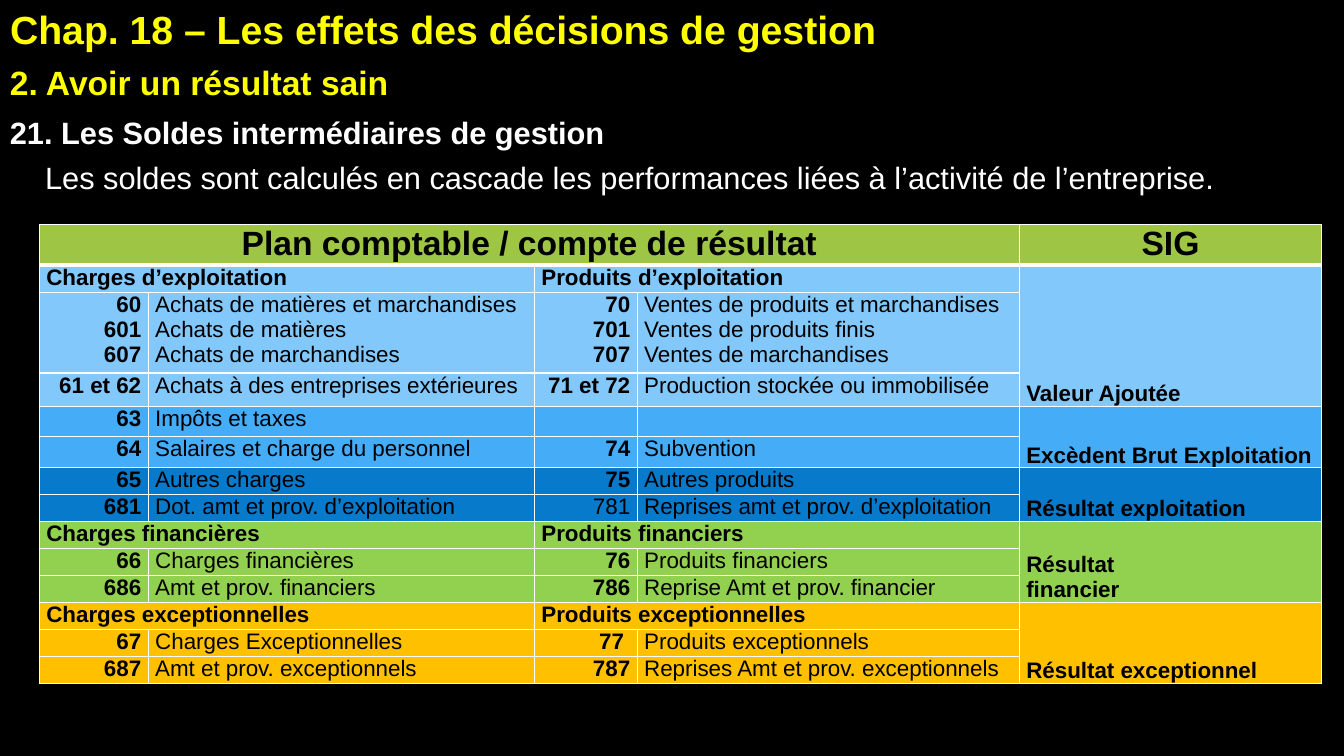
from lxml.etree import SubElement
from pptx import Presentation
from pptx.dml.color import RGBColor
from pptx.enum.text import MSO_ANCHOR, MSO_AUTO_SIZE, PP_ALIGN as Align
from pptx.oxml import parse_xml
from pptx.oxml.ns import nsdecls, qn
from pptx.util import Inches, Pt

COLUMN_WIDTHS = [1.08, 3.83, 1.02, 3.79, 3]
ROW_HEIGHTS = [0.39, 0.27, 0.79, 0.33, 0.28, 0.31] + [2.14 / 8] * 8

BLOCKS = [
    ("82C8FB", "Valeur Ajoutée", [
        ("Charges d’exploitation", "Produits d’exploitation"),
        ("60\n601\n607",
         "Achats de matières et marchandises\nAchats de matières\nAchats de marchandises",
         "70\n701\n707",
         "Ventes de produits et marchandises\nVentes de produits finis\nVentes de marchandises"),
        ("61 et 62", "Achats à des entreprises extérieures",
         "71 et 72", "Production stockée ou immobilisée"),
    ]),
    ("45ADF8", "Excèdent Brut Exploitation", [
        ("63", "Impôts et taxes", "", ""),
        ("64", "Salaires et charge du personnel", "74", "Subvention"),
    ]),
    ("077ACC", "Résultat exploitation", [
        ("65", "Autres charges ", "75", "Autres produits "),
        ("681", "Dot. amt et prov. d’exploitation",
         "781", "Reprises amt et prov. d’exploitation"),
    ]),
    ("92D050", "Résultat\nfinancier", [
        ("Charges financières", "Produits financiers"),
        ("66", "Charges financières ", "76", "Produits financiers "),
        ("686", "Amt et prov. financiers", "786", "Reprise Amt et prov. financier"),
    ]),
    ("FFC000", "Résultat exceptionnel", [
        ("Charges exceptionnelles", "Produits exceptionnelles"),
        ("67", "Charges Exceptionnelles", "77 ", "Produits exceptionnels"),
        ("687", "Amt et prov. exceptionnels", "787", "Reprises Amt et prov. exceptionnels"),
    ]),
]


def color(value):
    return RGBColor.from_string(value)


class SlideBuilder:
    font_name = "Arial"
    border_color = "FFFFFF"

    def __init__(self, presentation):
        self.slide = presentation.slides.add_slide(presentation.slide_layouts[5])
        background = self.slide.background.fill
        background.solid()
        background.fore_color.rgb = color("000000")

    def add_text(self, paragraph, text, size, text_color, bold=True,
                 align=Align.LEFT, before=0, after=0):
        paragraph.alignment = align
        paragraph.space_before = Pt(before)
        paragraph.space_after = Pt(after)
        if text:
            run = paragraph.add_run()
            run.text = text
            run.font.name = self.font_name
            run.font.size = Pt(size)
            run.font.bold = bold
            run.font.color.rgb = color(text_color)

    def prepare_frame(self, shape):
        frame = shape.text_frame
        frame.word_wrap = True
        frame.auto_size = MSO_AUTO_SIZE.SHAPE_TO_FIT_TEXT
        frame.vertical_anchor = MSO_ANCHOR.TOP
        return frame

    def title(self, text, left, top, width, height):
        shape = self.slide.shapes.title
        shape.left, shape.top = Inches(left), Inches(top)
        shape.width, shape.height = Inches(width), Inches(height)
        frame = self.prepare_frame(shape)
        self.add_text(frame.paragraphs[0], text, 28, "FFFF00", after=3)

    def text_box(self, left, top, width, height):
        shape = self.slide.shapes.add_textbox(
            Inches(left), Inches(top), Inches(width), Inches(height))
        return self.prepare_frame(shape)

    def table(self, left, top, widths, heights):
        frame = self.slide.shapes.add_table(
            len(heights), len(widths), Inches(left), Inches(top),
            Inches(sum(widths)), Inches(sum(heights)))
        table = frame.table
        table.horz_banding = False
        for column, width in zip(table.columns, widths):
            column.width = Inches(width)
        for row, height in zip(table.rows, heights):
            row.height = Inches(height)
        return table

    def borders(self, cell, top, bottom):
        properties = cell._tc.get_or_add_tcPr()
        sides = [("L", 1), ("R", 1), ("T", top), ("B", bottom)]
        for position, (side, width) in enumerate(sides):
            line = parse_xml(f'<a:ln{side} {nsdecls("a")} w="{Pt(width)}"/>')
            fill = SubElement(line, qn("a:solidFill"))
            SubElement(fill, qn("a:srgbClr")).set("val", self.border_color)
            properties.insert(position, line)

    def style_cells(self, table, row, fill):
        for column in range(len(table.columns)):
            cell = table.cell(row, column)
            cell.fill.solid()
            cell.fill.fore_color.rgb = color(fill)
            cell.margin_left = cell.margin_right = Inches(0.07)
            cell.margin_top = cell.margin_bottom = 0
            self.borders(cell, 3 if row == 1 else 1, 3 if row == 0 else 1)

    def cell_text(self, cell, text, size=16, bold=True, align=Align.LEFT, before=0):
        frame = cell.text_frame
        for index, line in enumerate(text.split("\n")):
            paragraph = frame.add_paragraph() if index else frame.paragraphs[0]
            self.add_text(paragraph, line, size, "000000", bold, align, before)

    def table_row(self, table, row, texts):
        if len(texts) == 2:
            for column, heading in zip((0, 2), texts):
                cell = table.cell(row, column)
                cell.merge(table.cell(row, column + 1))
                self.cell_text(cell, heading, align=Align.JUSTIFY, before=6)
            return
        for column, text in enumerate(texts):
            is_code = column % 2 == 0
            self.cell_text(table.cell(row, column), text,
                           bold=is_code and text != "781",
                           align=Align.RIGHT if is_code else Align.JUSTIFY)


def main():
    presentation = Presentation()
    presentation.slide_width = Inches(13.33)
    presentation.slide_height = Inches(7.5)
    builder = SlideBuilder(presentation)

    builder.title("Chap. 18 – Les effets des décisions de gestion", 0, 0, 10.94, 0.57)
    section = builder.text_box(0, 0.57, 10.75, 0.5)
    builder.add_text(section.paragraphs[0], "2. Avoir un résultat sain", 24, "FFFF00",
                     before=12, after=6)
    topic = builder.text_box(0, 1.08, 12.49, 0.93)
    builder.add_text(topic.paragraphs[0], "21. Les Soldes intermédiaires de gestion",
                     22, "FFFFFF", after=6)
    builder.add_text(
        topic.add_paragraph(),
        " Les soldes sont calculés en cascade les performances liées à l’activité de l’entreprise. ",
        22, "FFFFFF", bold=False, align=Align.CENTER, after=6)

    table = builder.table(0.39, 2.23, COLUMN_WIDTHS, ROW_HEIGHTS)
    builder.style_cells(table, 0, "9EC544")
    table.cell(0, 0).merge(table.cell(0, 3))
    for column, heading in ((0, "Plan comptable / compte de résultat"), (4, "SIG")):
        builder.cell_text(table.cell(0, column), heading, size=24, align=Align.CENTER)

    row = 1
    for fill, balance, lines in BLOCKS:
        balance_cell = table.cell(row, 4)
        balance_cell.merge(table.cell(row + len(lines) - 1, 4))
        balance_cell.vertical_anchor = MSO_ANCHOR.BOTTOM
        builder.cell_text(balance_cell, balance)
        for texts in lines:
            builder.style_cells(table, row, fill)
            builder.table_row(table, row, texts)
            row += 1

    presentation.save("out.pptx")


if __name__ == "__main__":
    main()
